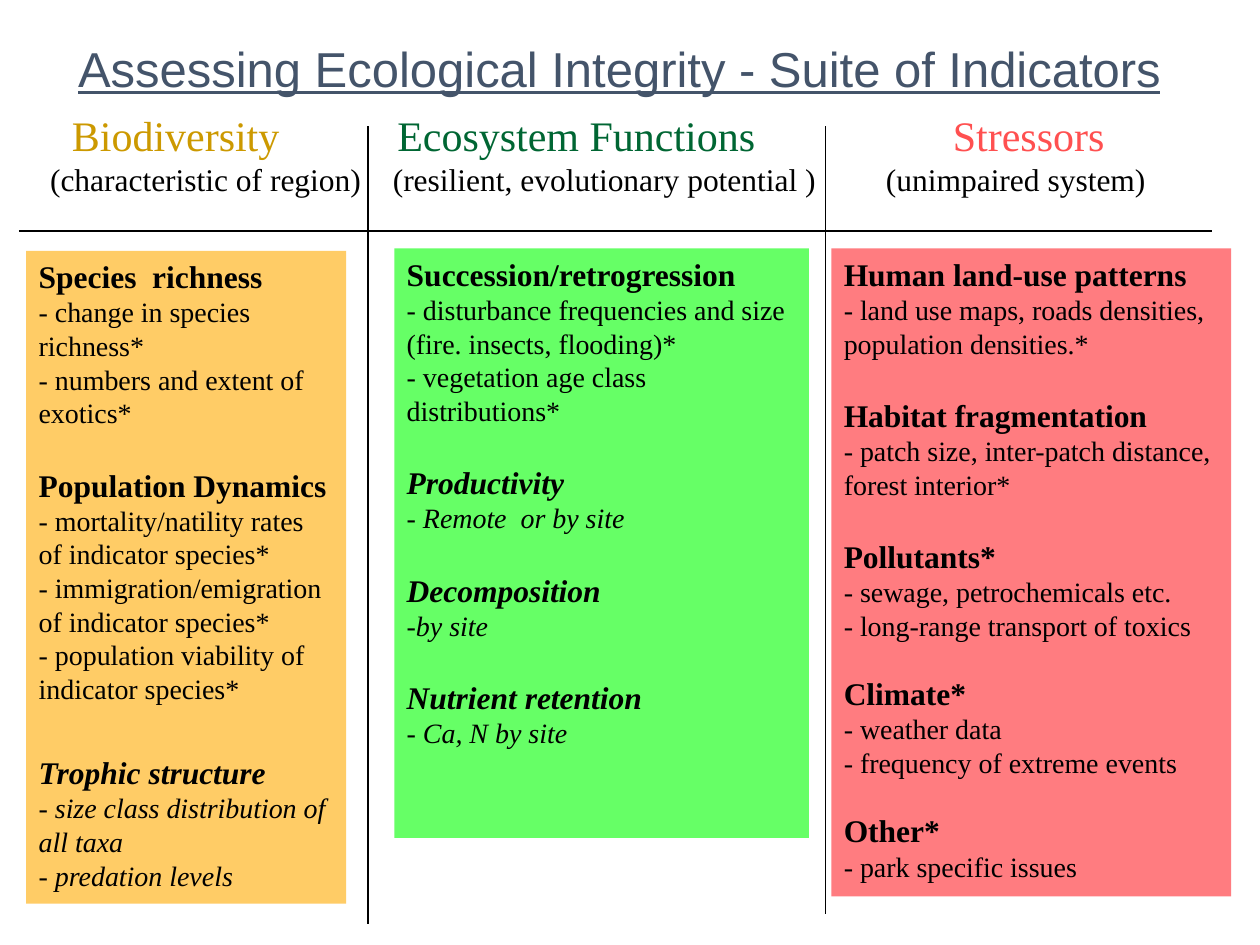
from dataclasses import dataclass

from lxml import etree
from pptx import Presentation
from pptx.dml.color import RGBColor
from pptx.enum import shapes, text
from pptx.oxml.ns import qn
from pptx.util import Cm, Pt


@dataclass(frozen=True)
class Theme:
    title_font: str = "Arial"
    body_font: str = "Times New Roman"
    title_size: int = 28
    column_size: int = 24
    heading_size: int = 18
    detail_size: int = 16
    title: str = "44546A"
    ink: str = "000000"
    biodiversity: str = "CC9900"
    functions: str = "006633"
    stressors: str = "FF5050"
    orange: str = "FFCC66"
    green: str = "66FF66"
    red: str = "FF7C80"


T = Theme()

# Panels: box in cm, fill, then (heading, details, italic, gap above in points)
PANELS = [
    ((0.53, 5.06, 6.45, 13.16), T.orange, [
        ("Species  richness",
         ["- change in species richness*", "- numbers and extent of exotics*"], False, 0),
        ("Population Dynamics",
         ["- mortality/natility rates of indicator species*",
          "- immigration/emigration of indicator species*",
          "- population viability of indicator species*"], False, 20.7),
        ("Trophic structure",
         ["- size class distribution of all taxa", "- predation levels"], True, 27.6),
    ]),
    ((7.95, 5.01, 8.36, 11.88), T.green, [
        ("Succession/retrogression",
         ["- disturbance frequencies and size", "(fire. insects, flooding)*",
          "- vegetation age class distributions*"], False, 0),
        ("Productivity", ["- Remote  or by site"], True, 20.7),
        ("Decomposition", ["-by site"], True, 20.7),
        ("Nutrient retention", ["- Ca, N by site"], True, 20.7),
    ]),
    ((16.76, 5.01, 8.06, 13.06), T.red, [
        ("Human land-use patterns",
         ["- land use maps, roads densities, population densities.*"], False, 0),
        ("Habitat fragmentation",
         ["- patch size, inter-patch distance, forest interior*"], False, 20.7),
        ("Pollutants*",
         ["- sewage, petrochemicals etc.", "- long-range transport of toxics"], False, 20.7),
        ("Climate*", ["- weather data", "- frequency of extreme events"], False, 18.4),
        ("Other*", ["- park specific issues"], False, 18.4),
    ]),
]

# Dividers: x1, y1, x2, y2 in cm
DIVIDERS = [
    (7.42, 2.54, 7.42, 18.62),
    (16.64, 2.54, 16.64, 18.42),
    (0.38, 4.65, 24.43, 4.65),
]


def set_font(font, name, size, color, bold=False, italic=False):
    font.name, font.size = name, Pt(size)
    font.bold, font.italic = bold, italic
    font.color.rgb = RGBColor.from_string(color)


def set_tabs(p, stops):
    tabs = etree.SubElement(p._p.get_or_add_pPr(), qn("a:tabLst"))
    for stop in stops:
        etree.SubElement(tabs, qn("a:tab"), pos=str(Cm(stop)), algn="l")


def add_title(s, title):
    sp = s.shapes.title
    sp.left, sp.top, sp.width, sp.height = Cm(1.32), Cm(0.64), Cm(22.38), Cm(1.45)
    tf = sp.text_frame
    tf.text = title
    tf.word_wrap = False
    tf.auto_size = text.MSO_AUTO_SIZE.NONE
    p = tf.paragraphs[0]
    p.alignment = text.PP_ALIGN.LEFT
    set_font(p.font, T.title_font, T.title_size, T.title)
    p.font.underline = True


def add_column_heads(s):
    tf = s.shapes.add_textbox(Cm(0.76), Cm(2.08), Cm(23.47), Cm(2.03)).text_frame
    tf.word_wrap = True
    names = tf.paragraphs[0]
    set_tabs(names, (0.44, 7, 18.2))
    for name, color in (("Biodiversity", T.biodiversity),
                        ("Ecosystem Functions", T.functions),
                        ("Stressors", T.stressors)):
        r = names.add_run()
        r.text = "\t" + name
        set_font(r.font, T.body_font, T.column_size, color)
    notes = tf.add_paragraph()
    set_tabs(notes, (6.91, 16.85))
    notes.add_run().text = "\t".join(("(characteristic of region)",
                                      "(resilient, evolutionary potential )",
                                      "(unimpaired system)"))
    set_font(notes.font, T.body_font, T.heading_size, T.ink)


def add_panel(s, box, fill, sections):
    sp = s.shapes.add_shape(shapes.MSO_SHAPE.RECTANGLE, *map(Cm, box))
    sp.shadow.inherit = False
    sp.fill.solid()
    sp.fill.fore_color.rgb = RGBColor.from_string(fill)
    sp.line.fill.background()
    tf = sp.text_frame
    tf.word_wrap = True
    tf.vertical_anchor = text.MSO_ANCHOR.TOP
    p = tf.paragraphs[0]
    for i, (heading, details, italic, gap) in enumerate(sections):
        if i:
            p = tf.add_paragraph()
        p.space_before = Pt(gap)
        write_line(p, heading, T.heading_size, True, italic)
        for detail in details:
            write_line(tf.add_paragraph(), detail, T.detail_size, False, italic)


def write_line(p, line, size, bold, italic):
    p.text = line
    p.alignment = text.PP_ALIGN.LEFT
    set_font(p.font, T.body_font, size, T.ink, bold, italic)


def add_divider(s, ends):
    line = s.shapes.add_connector(shapes.MSO_CONNECTOR.STRAIGHT, *map(Cm, ends))
    line.line.width = Pt(1)
    line.line.color.rgb = RGBColor.from_string(T.ink)
    etree.SubElement(line._element.spPr, qn("a:effectLst"))


def main():
    prs = Presentation()
    prs.slide_width, prs.slide_height = Cm(25.4), Cm(19.05)
    s = prs.slides.add_slide(prs.slide_layouts[5])
    add_title(s, "Assessing Ecological Integrity - Suite of Indicators")
    add_column_heads(s)
    for panel in PANELS:
        add_panel(s, *panel)
    for ends in DIVIDERS:
        add_divider(s, ends)
    prs.save("out.pptx")


if __name__ == "__main__":
    main()
